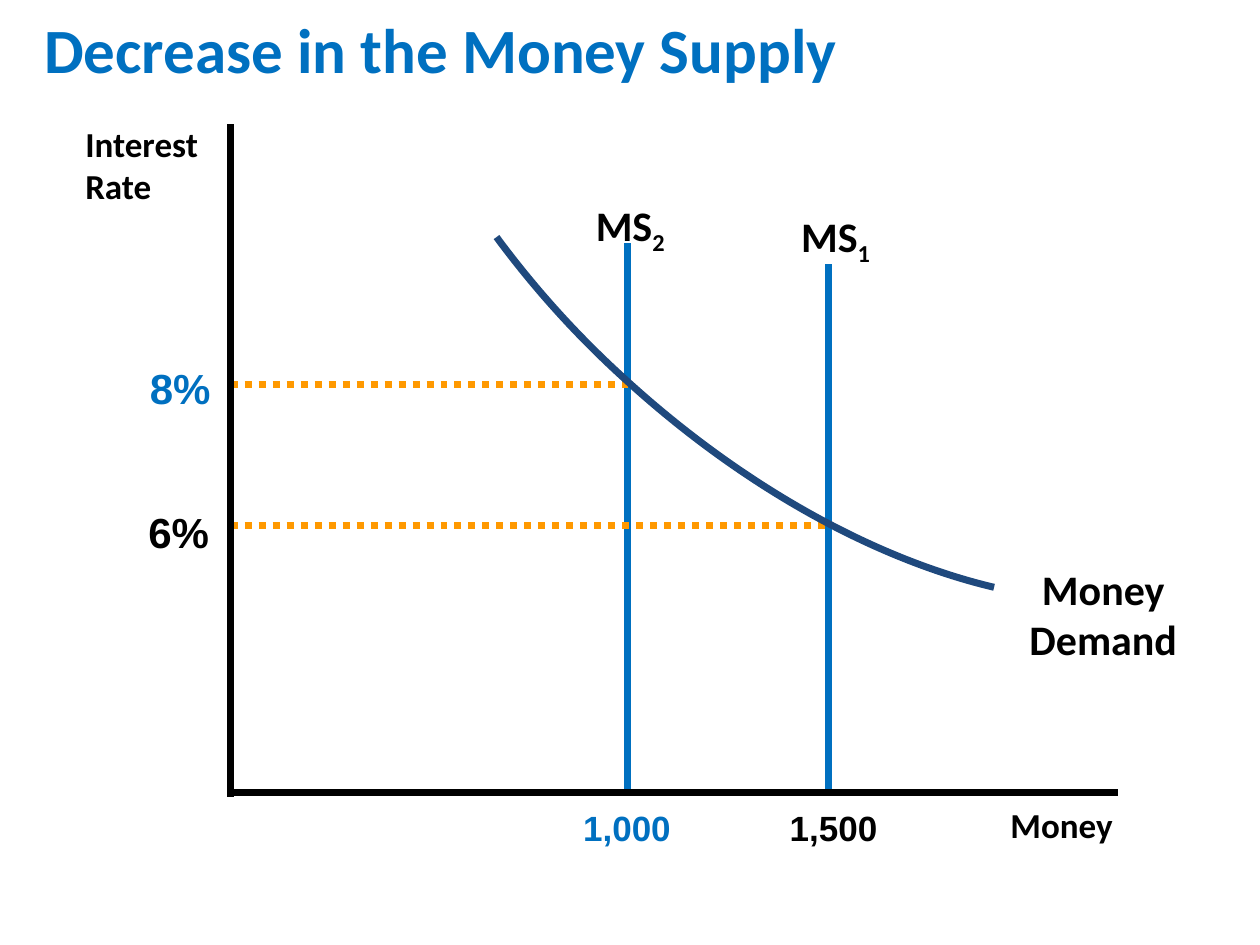
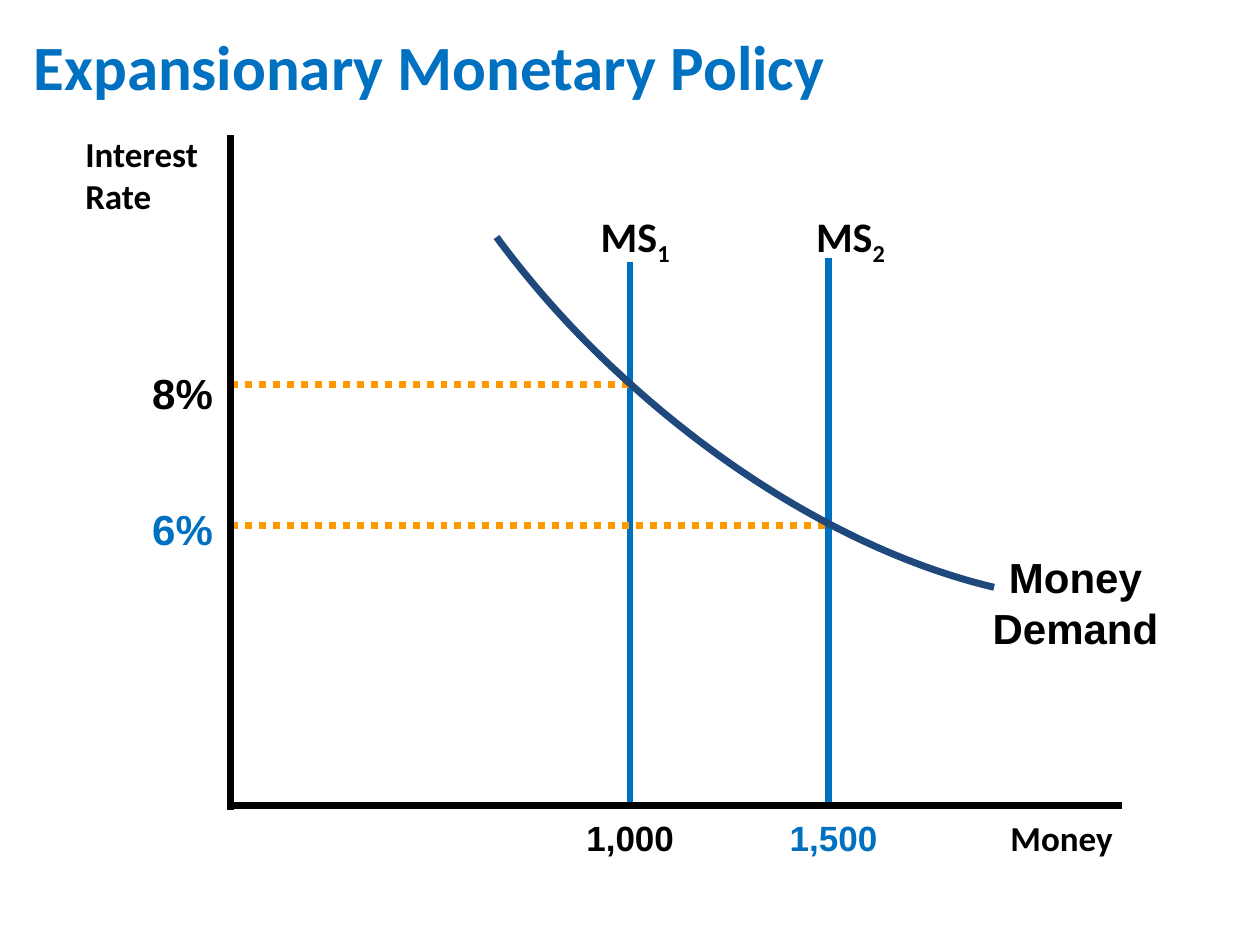
from dataclasses import dataclass

from lxml.etree import SubElement
from pptx import Presentation
from pptx.dml.color import RGBColor
from pptx.enum.dml import MSO_LINE
from pptx.enum.shapes import MSO_CONNECTOR
from pptx.enum.text import PP_ALIGN
from pptx.oxml.ns import qn
from pptx.util import Cm, Pt


@dataclass(frozen=True)
class Theme:
    accent: RGBColor = RGBColor(0x00, 0x70, 0xC0)
    ink: RGBColor = RGBColor(0x00, 0x00, 0x00)
    paper: RGBColor = RGBColor(0xFF, 0xFF, 0xFF)
    guide: RGBColor = RGBColor(0xFF, 0x99, 0x00)
    demand: RGBColor = RGBColor(0x1F, 0x49, 0x7D)
    heading_font: str = "Calibri"
    value_font: str = "Arial"
    title_size: Pt = Pt(36)
    label_size: Pt = Pt(24)
    axis_size: Pt = Pt(20)
    stroke: Pt = Pt(4)


theme = Theme()


def add_text(slide, text, box, size=theme.label_size, font=theme.heading_font,
             color=theme.ink, align=PP_ALIGN.LEFT, subscript="", fill=None):
    label = slide.shapes.add_textbox(*map(Cm, box))
    if fill is not None:
        label.fill.solid()
        label.fill.fore_color.rgb = fill
    label.text_frame.word_wrap = True
    paragraph = label.text_frame.paragraphs[0]
    paragraph.alignment = align
    for part in filter(None, (text, subscript)):
        run = paragraph.add_run()
        run.text = part
        run.font.name = font
        run.font.size = size
        run.font.bold = True
        run.font.color.rgb = color
    if subscript:
        run.font._element.set("baseline", "-25000")


def add_line(slide, start, end, color, dash=None):
    segment = slide.shapes.add_connector(MSO_CONNECTOR.STRAIGHT, *map(Cm, start + end))
    segment.line.color.rgb = color
    segment.line.width = theme.stroke
    if dash is not None:
        segment.line.dash_style = dash
    SubElement(segment._element.spPr, qn("a:effectLst"))


axis_x = 4.65
demand_points = [(20.04, 11.84), (17.55, 11.25), (14.86, 9.73), (12.52, 7.57),
                 (11.58, 6.71), (10.74, 5.77), (10.01, 4.78)]

scenarios = [
    dict(
        title="Decrease in the Money Supply", title_box=(0.64, 0.08, 19.25, 1.8),
        demand_box=(20.12, 11.23, 4.24, 2.31), demand_font=theme.heading_font,
        axis_top=2.51, base_y=15.98, axis_end=22.53,
        rate_name_top=2.34, money_top=16.08, quantity_top=16.13,
        supplies=[
            dict(x=12.65, top=4.9, number="2", name_box=(10.8, 3.89, 3.81, 1.27),
                 quantity="1,000", quantity_left=10.8, quantity_width=3.68,
                 quantity_align=PP_ALIGN.CENTER, rate="8%", rate_at=(2.77, 7.19),
                 rate_y=7.75, color=theme.accent),
            dict(x=16.71, top=5.33, number="1", name_box=(15.04, 4.11, 3.61, 1.27),
                 quantity="1,500", quantity_left=15.67, quantity_width=2.74,
                 quantity_align=PP_ALIGN.LEFT, rate="6%", rate_at=(2.74, 10.08),
                 rate_y=10.59, color=theme.ink),
        ],
    ),
    dict(
        title="Expansionary Monetary Policy", title_box=(0.43, 0.43, 20.12, 1.8),
        demand_box=(19.56, 11, 4.24, 2.11), demand_font=theme.value_font,
        axis_top=2.72, base_y=16.23, axis_end=22.61,
        rate_name_top=2.54, money_top=16.33, quantity_top=16.33,
        supplies=[
            dict(x=12.7, top=5.28, number="1", name_box=(11, 4.11, 3.61, 1.27),
                 quantity="1,000", quantity_left=10.8, quantity_width=3.81,
                 quantity_align=PP_ALIGN.CENTER, rate="8%", rate_at=(2.82, 7.29),
                 rate_y=7.75, color=theme.ink),
            dict(x=16.71, top=5.21, number="2", name_box=(15.24, 4.11, 3.81, 1.27),
                 quantity="1,500", quantity_left=15.67, quantity_width=2.97,
                 quantity_align=PP_ALIGN.LEFT, rate="6%", rate_at=(2.82, 10.03),
                 rate_y=10.59, color=theme.accent),
        ],
    ),
]

deck = Presentation()
deck.slide_width = Cm(25.4)
deck.slide_height = Cm(19.05)

for scenario in scenarios:
    slide = deck.slides.add_slide(deck.slide_layouts[6])
    base_y = scenario["base_y"]

    add_text(slide, scenario["title"], scenario["title_box"], size=theme.title_size,
             color=theme.accent, fill=theme.paper)
    add_text(slide, "Money Demand", scenario["demand_box"],
             font=scenario["demand_font"], align=PP_ALIGN.CENTER)

    for supply in scenario["supplies"]:
        add_line(slide, (supply["x"], supply["top"]), (supply["x"], base_y), theme.accent)
        add_text(slide, "MS", supply["name_box"], align=PP_ALIGN.CENTER,
                 subscript=supply["number"])
        add_text(slide, supply["quantity"],
                 (supply["quantity_left"], scenario["quantity_top"],
                  supply["quantity_width"], 1.02),
                 size=theme.axis_size, font=theme.value_font, color=supply["color"],
                 align=supply["quantity_align"])

    for supply in scenario["supplies"]:
        add_text(slide, supply["rate"], supply["rate_at"] + (2.25, 1.19),
                 font=theme.value_font, color=supply["color"])
        add_line(slide, (axis_x, supply["rate_y"]), (supply["x"], supply["rate_y"]),
                 theme.guide, dash=MSO_LINE.ROUND_DOT)

    add_text(slide, "Interest Rate", (1.47, scenario["rate_name_top"], 3.23, 1.96),
             size=theme.axis_size)
    add_text(slide, "Money", (20.12, scenario["money_top"], 2.97, 1.12),
             size=theme.axis_size)
    add_line(slide, (axis_x, scenario["axis_top"]), (axis_x, base_y + 0.09), theme.ink)

    start, *controls = [(Cm(x), Cm(y)) for x, y in demand_points]
    builder = slide.shapes.build_freeform(*start)
    builder.add_line_segments(controls, close=False)
    demand = builder.convert_to_shape()
    demand.shadow.inherit = False
    demand.fill.background()
    demand.line.color.rgb = theme.demand
    demand.line.width = theme.stroke
    outline = next(demand._element.iter(qn("a:path")))
    segments = outline.findall(qn("a:lnTo"))
    for first in range(0, len(segments), 3):
        bezier = SubElement(outline, qn("a:cubicBezTo"))
        for segment in segments[first:first + 3]:
            bezier.append(segment[0])
            outline.remove(segment)

    add_line(slide, (axis_x, base_y), (scenario["axis_end"], base_y), theme.ink)

deck.save("out.pptx")
